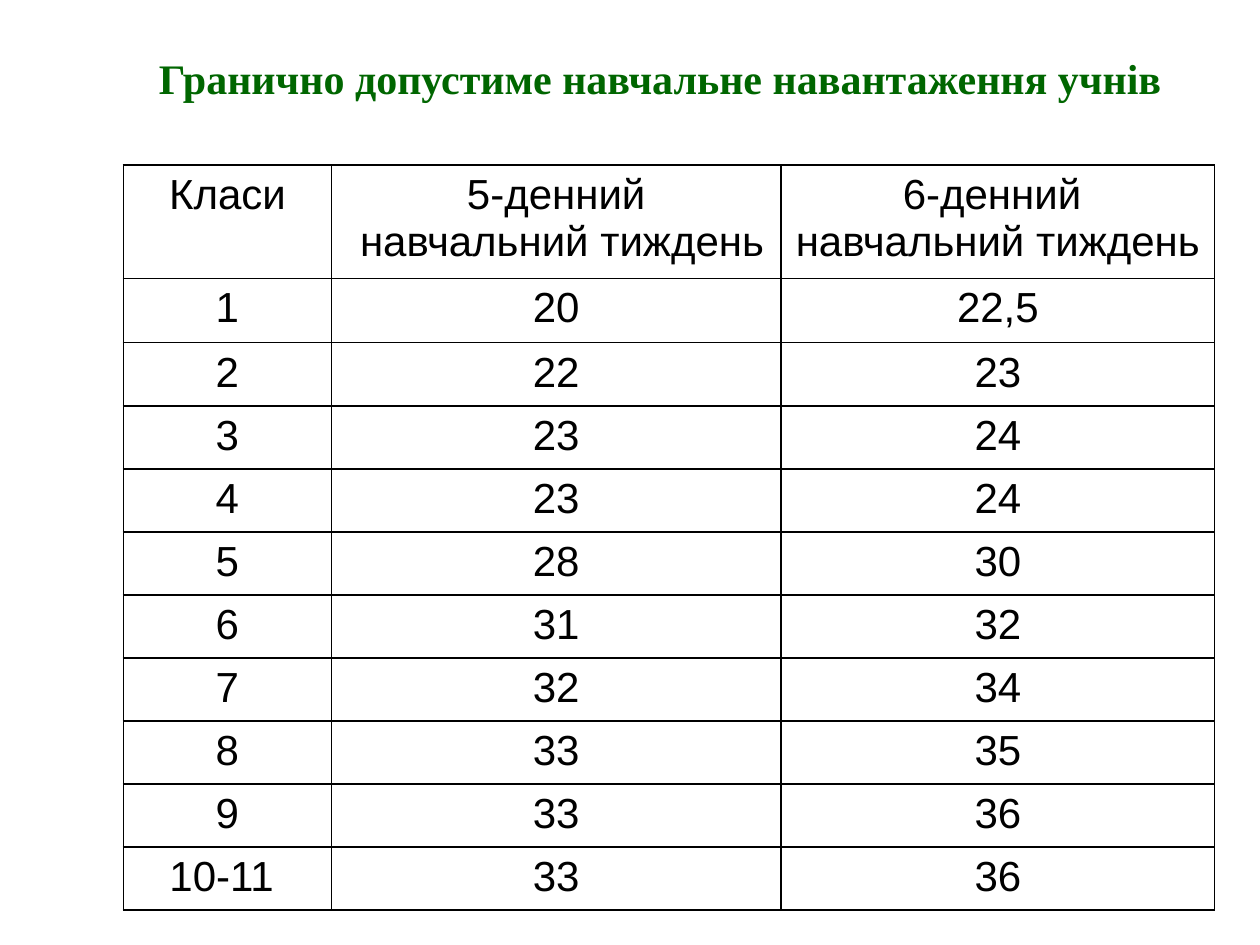
from dataclasses import dataclass

from lxml import etree
from pptx import Presentation
from pptx.dml.color import RGBColor
from pptx.enum.text import MSO_ANCHOR, PP_ALIGN
from pptx.oxml.ns import qn
from pptx.util import Inches, Pt

CENTER = PP_ALIGN.CENTER
MIDDLE = MSO_ANCHOR.MIDDLE
BLANK_LAYOUT = 6


@dataclass(frozen=True)
class Theme:
    title_font: str = "Times New Roman"
    table_font: str = "Arial"
    title_color: str = "006600"
    text_color: str = "000000"
    border_color: str = "000000"
    text_size: int = 24
    border_width: int = 1


THEME = Theme()
TITLE = "Гранично допустиме навчальне навантаження учнів"
COLUMN_WIDTHS = [1.65, 3.57, 3.44]
HANGING_INDENT = 0.38
LOADS = [
    ("Класи", "5-денний\n навчальний тиждень", "6-денний \nнавчальний тиждень"),
    ("1", "20", "22,5"),
    ("2", "22", "23"),
    ("3", "23", "24"),
    ("4", "23", "24"),
    ("5", "28", "30"),
    ("6", "31", "32"),
    ("7", "32", "34"),
    ("8", "33", "35"),
    ("9", "33", "36"),
    ("10-11 ", "33", "36"),
]
ROW_HEIGHTS = [0.9, 0.51] + [0.47] * (len(LOADS) - 2)


def style_paragraph(paragraph, font_name, color, bold=False):
    paragraph.alignment = CENTER
    font = paragraph.font
    font.name = font_name
    font.size = Pt(THEME.text_size)
    font.bold = bold
    font.color.rgb = RGBColor.from_string(color)


def add_title(slide):
    box = slide.shapes.add_textbox(
        Inches(0.71), Inches(0.13), Inches(9.06), Inches(0.98)
    )
    frame = box.text_frame
    frame.word_wrap = True
    frame.vertical_anchor = MIDDLE
    frame.text = TITLE
    style_paragraph(frame.paragraphs[0], THEME.title_font, THEME.title_color, bold=True)


def add_borders(cell):
    properties = cell._tc.get_or_add_tcPr()
    for side in ("a:lnL", "a:lnR", "a:lnT", "a:lnB"):
        line = etree.SubElement(properties, qn(side), w=str(Pt(THEME.border_width)))
        fill = etree.SubElement(line, qn("a:solidFill"))
        etree.SubElement(fill, qn("a:srgbClr"), val=THEME.border_color)


def fill_cell(cell, text):
    add_borders(cell)
    cell.fill.background()
    cell.text = text
    for paragraph in cell.text_frame.paragraphs:
        properties = paragraph._p.get_or_add_pPr()
        properties.set("marL", str(Inches(HANGING_INDENT)))
        properties.set("indent", str(-Inches(HANGING_INDENT)))
        style_paragraph(paragraph, THEME.table_font, THEME.text_color)


def add_load_table(slide):
    table = slide.shapes.add_table(
        len(LOADS),
        len(COLUMN_WIDTHS),
        Inches(0.98),
        Inches(1.31),
        Inches(sum(COLUMN_WIDTHS)),
        Inches(sum(ROW_HEIGHTS)),
    ).table
    table.first_row = False
    table.horz_banding = False
    for column, width in zip(table.columns, COLUMN_WIDTHS):
        column.width = Inches(width)
    for row, height, texts in zip(table.rows, ROW_HEIGHTS, LOADS):
        row.height = Inches(height)
        for cell, text in zip(row.cells, texts):
            fill_cell(cell, text)


def main():
    presentation = Presentation()
    presentation.slide_width = Inches(10)
    presentation.slide_height = Inches(7.5)
    slide = presentation.slides.add_slide(presentation.slide_layouts[BLANK_LAYOUT])
    add_title(slide)
    add_load_table(slide)
    presentation.save("out.pptx")


if __name__ == "__main__":
    main()
